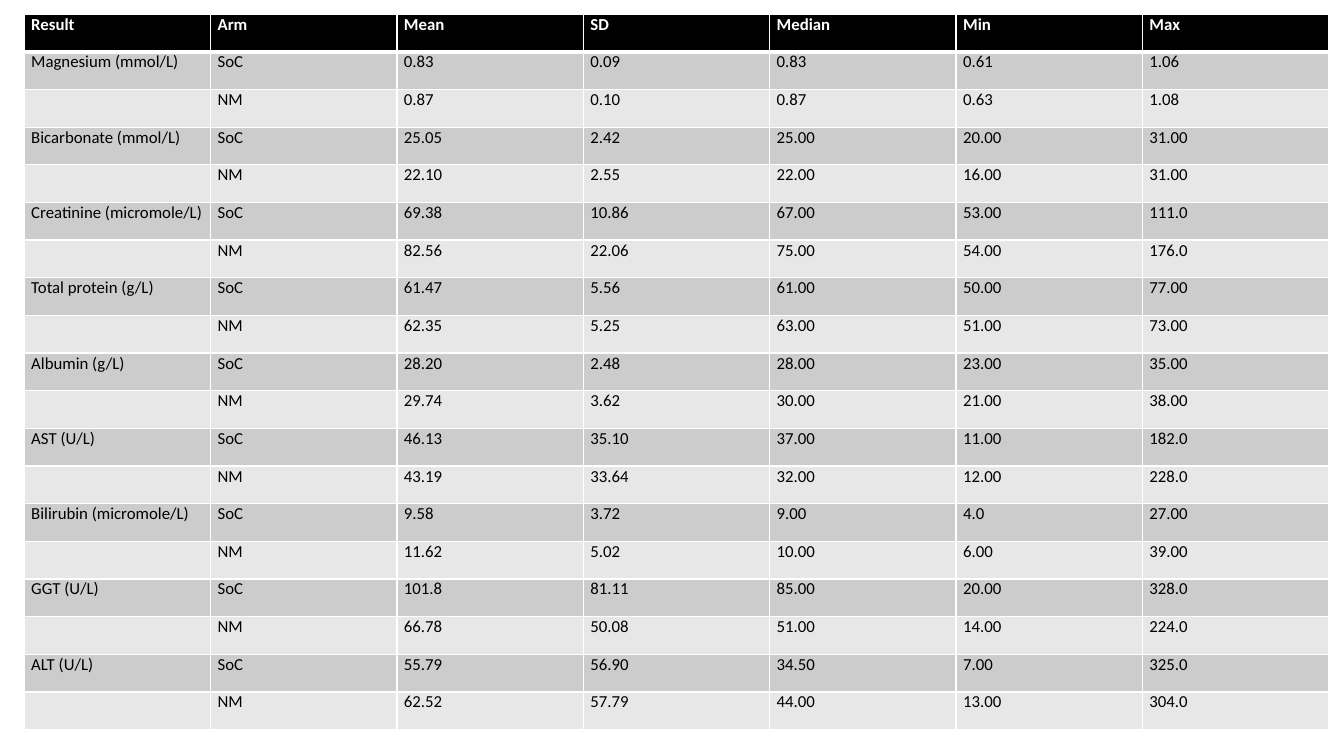
from pptx import Presentation
from pptx.dml.color import RGBColor
from pptx.oxml import parse_xml
from pptx.oxml.ns import nsdecls
from pptx.util import Inches, Pt

BLACK = RGBColor(0x00, 0x00, 0x00)
WHITE = RGBColor(0xFF, 0xFF, 0xFF)
SOC_GREY = RGBColor(0xCC, 0xCC, 0xCC)
NM_GREY = RGBColor(0xE7, 0xE7, 0xE7)

HEADINGS = ("Result", "Arm", "Mean", "SD", "Median", "Min", "Max")
RESULTS = (
    ("Magnesium (mmol/L)", "0.83 0.09 0.83 0.61 1.06", "0.87 0.10 0.87 0.63 1.08"),
    ("Bicarbonate (mmol/L)", "25.05 2.42 25.00 20.00 31.00", "22.10 2.55 22.00 16.00 31.00"),
    ("Creatinine (micromole/L)", "69.38 10.86 67.00 53.00 111.0", "82.56 22.06 75.00 54.00 176.0"),
    ("Total protein (g/L)", "61.47 5.56 61.00 50.00 77.00", "62.35 5.25 63.00 51.00 73.00"),
    ("Albumin (g/L)", "28.20 2.48 28.00 23.00 35.00", "29.74 3.62 30.00 21.00 38.00"),
    ("AST (U/L)", "46.13 35.10 37.00 11.00 182.0", "43.19 33.64 32.00 12.00 228.0"),
    ("Bilirubin (micromole/L)", "9.58 3.72 9.00 4.0 27.00", "11.62 5.02 10.00 6.00 39.00"),
    ("GGT (U/L)", "101.8 81.11 85.00 20.00 328.0", "66.78 50.08 51.00 14.00 224.0"),
    ("ALT (U/L)", "55.79 56.90 34.50 7.00 325.0", "62.52 57.79 44.00 13.00 304.0"),
)


def set_borders(cell, bottom_width):
    """Draw white cell edges, 1 pt wide except for the bottom one."""
    properties = cell._tc.get_or_add_tcPr()
    widths = {"lnL": Pt(1), "lnR": Pt(1), "lnT": Pt(1), "lnB": bottom_width}
    for position, (edge, width) in enumerate(widths.items()):
        line = parse_xml(
            f'<a:{edge} {nsdecls("a")} w="{width}"><a:solidFill>'
            f'<a:srgbClr val="{WHITE}"/></a:solidFill></a:{edge}>'
        )
        properties.insert(position, line)


def fill_cell(cell, text, fill, color, is_heading):
    cell.margin_left = cell.margin_right = Inches(0.07)
    cell.margin_top = cell.margin_bottom = 0
    cell.fill.solid()
    cell.fill.fore_color.rgb = fill
    set_borders(cell, Pt(3) if is_heading else Pt(1))
    cell.text = text
    font = cell.text_frame.paragraphs[0].font
    font.name = "Calibri"
    font.size = Pt(12)
    font.bold = is_heading
    font.color.rgb = color


def fill_row(row, texts, fill, color=BLACK, is_heading=False):
    for cell, text in zip(row.cells, texts):
        fill_cell(cell, text, fill, color, is_heading)


def add_results_table(slide):
    """Add a heading row, then an SoC row and an NM row for each result."""
    frame = slide.shapes.add_table(
        1 + 2 * len(RESULTS), len(HEADINGS),
        Inches(0.24), Inches(0.14), Inches(12.94), Inches(7.1),
    )
    rows = iter(frame.table.rows)
    fill_row(next(rows), HEADINGS, BLACK, WHITE, is_heading=True)
    for name, soc, nm in RESULTS:
        fill_row(next(rows), (name, "SoC", *soc.split()), SOC_GREY)
        fill_row(next(rows), ("", "NM", *nm.split()), NM_GREY)


def main():
    presentation = Presentation()
    presentation.slide_width = Inches(13.33)
    presentation.slide_height = Inches(7.5)
    slide = presentation.slides.add_slide(presentation.slide_layouts[6])
    add_results_table(slide)
    presentation.save("out.pptx")


if __name__ == "__main__":
    main()
